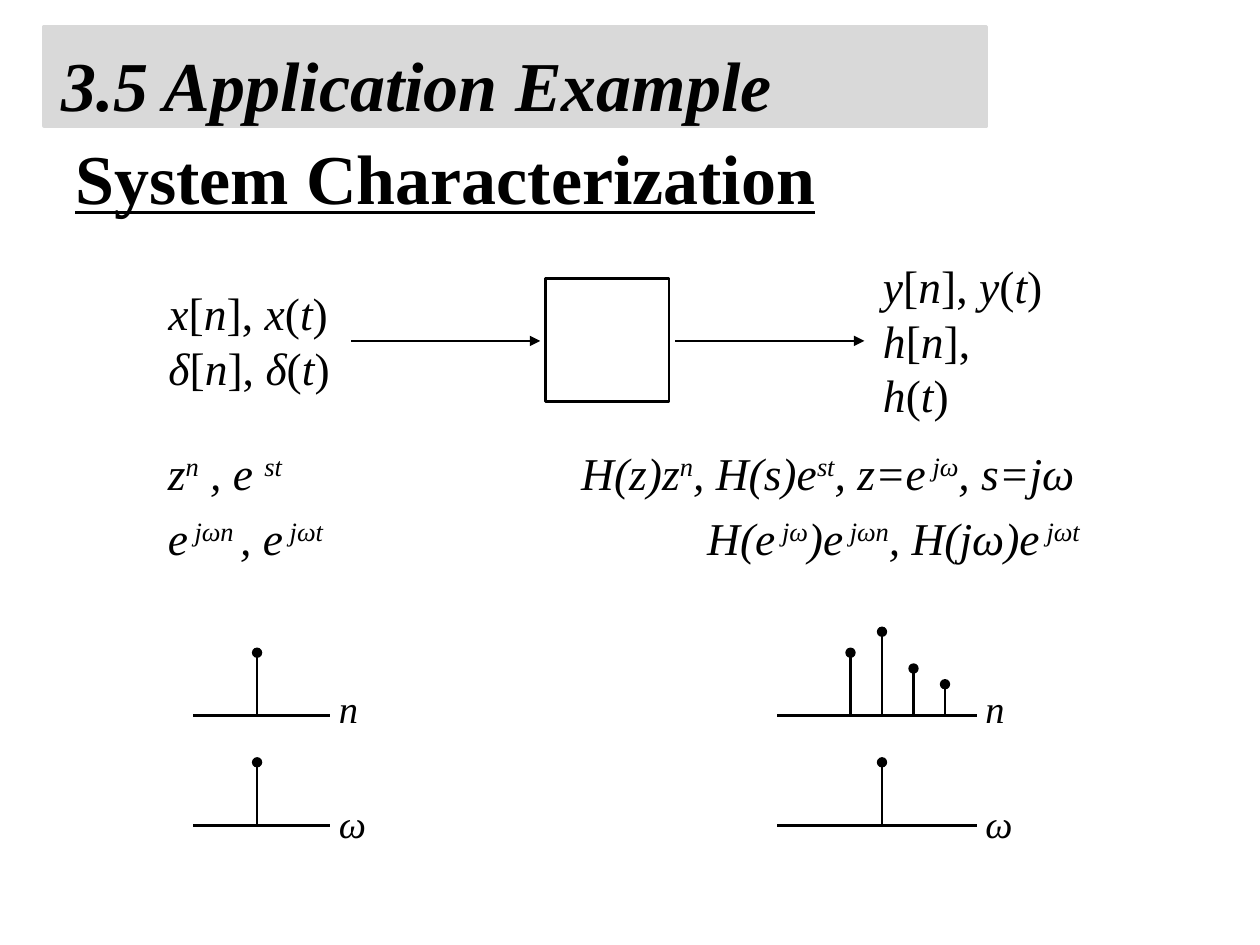
from dataclasses import dataclass

from lxml import etree
from pptx import Presentation
from pptx.dml.color import RGBColor
from pptx.enum.shapes import MSO_CONNECTOR, MSO_SHAPE
from pptx.enum.text import MSO_ANCHOR
from pptx.oxml.ns import qn
from pptx.util import Pt

STRAIGHT = MSO_CONNECTOR.STRAIGHT
RECTANGLE = MSO_SHAPE.RECTANGLE
TOP = MSO_ANCHOR.TOP
MIDDLE = MSO_ANCHOR.MIDDLE


@dataclass(frozen=True)
class Theme:
    font: str = "Times New Roman"
    ink: RGBColor = RGBColor(0, 0, 0)
    paper: RGBColor = RGBColor(255, 255, 255)
    band: RGBColor = RGBColor(0xD9, 0xD9, 0xD9)
    heading_size: float = 40
    formula_size: float = 26
    label_size: float = 22
    line_width: float = 1.5
    band_line_width: float = 2


THEME = Theme()


def add_rectangle(page, left, top, width, height, fill, line, line_width):
    box = page.shapes.add_shape(RECTANGLE, Pt(left), Pt(top), Pt(width), Pt(height))
    box.shadow.inherit = False
    box.fill.solid()
    box.fill.fore_color.rgb = fill
    box.line.color.rgb = line
    box.line.width = Pt(line_width)


def add_text_frame(page, left, top, width, height, anchor=TOP):
    box = page.shapes.add_textbox(Pt(left), Pt(top), Pt(width), Pt(height))
    frame = box.text_frame
    frame.word_wrap = True
    frame.vertical_anchor = anchor
    return frame


def add_span(para, text, size, italic=True, bold=False, underline=False, raised=False):
    span = para.add_run()
    span.text = text
    font = span.font
    font.name = THEME.font
    font.size = Pt(size)
    font.color.rgb = THEME.ink
    font.italic = italic
    font.bold = bold
    font.underline = underline
    if raised:
        span._r.get_or_add_rPr().set("baseline", "30000")


def add_heading(page, text, left, top, height, spacing, **style):
    frame = add_text_frame(page, left, top, 720 - left, height, MIDDLE)
    para = frame.paragraphs[0]
    para.line_spacing = spacing
    add_span(para, text, THEME.heading_size, bold=True, **style)


def add_signals(page, left, width, lines):
    frame = add_text_frame(page, left, 159, width, 70.5, MIDDLE)
    for row, line in enumerate(lines):
        para = frame.add_paragraph() if row else frame.paragraphs[0]
        for index, text in enumerate(line.split("|")):
            add_span(para, text, THEME.formula_size, italic=index % 2 == 0)


def add_tab_stop(para, position):
    tabs = etree.SubElement(para._p.get_or_add_pPr(), qn("a:tabLst"))
    etree.SubElement(tabs, qn("a:tab"), pos=str(Pt(position)), algn="l")


def add_formulas(page, rows):
    frame = add_text_frame(page, 88.8, 250.6, 631.2, 76.3)
    for row, (tab_position, formula) in enumerate(rows):
        para = frame.add_paragraph() if row else frame.paragraphs[0]
        para.space_before = Pt(6)
        add_tab_stop(para, tab_position)
        for index, text in enumerate(formula.split("|")):
            add_span(para, text, THEME.formula_size, raised=index % 2 == 1)


def add_line(page, start, end, end_tag=None, end_type=None):
    line = page.shapes.add_connector(STRAIGHT, *map(Pt, start + end))
    line.line.color.rgb = THEME.ink
    line.line.width = Pt(THEME.line_width)
    if end_tag:
        etree.SubElement(line.line._get_or_add_ln(), qn(end_tag), type=end_type)
    etree.SubElement(line._element.spPr, qn("a:effectLst"))


def add_stem_plot(page, left, right, axis, label, label_rise, stems):
    add_line(page, (left, axis), (right, axis))
    for center, height in stems:
        add_line(page, (center, axis - height), (center, axis), "a:headEnd", "oval")
    frame = add_text_frame(page, right - 2, axis - label_rise, 36, 42)
    add_span(frame.paragraphs[0], label, THEME.label_size)


def main():
    deck = Presentation()
    deck.slide_width, deck.slide_height = Pt(720), Pt(540)
    page = deck.slides.add_slide(deck.slide_layouts[6])

    add_rectangle(page, 25.2, 15.1, 538.6, 56.9, THEME.band, THEME.band, THEME.band_line_width)
    add_heading(page, "3.5 Application Example", 28, 0, 71.3, 1.5)
    add_heading(page, "System Characterization", 36, 73.4, 55.4, 1, italic=False, underline=True)

    add_signals(page, 89.2, 108, ["x|[|n|], |x|(|t|)", "δ|[|n|], |δ|(|t|)"])
    add_rectangle(page, 311.8, 159, 70.5, 70.5, THEME.paper, THEME.ink, THEME.line_width)
    add_signals(page, 497.5, 105.8, ["y|[|n|], |y|(|t|)", "h|[|n|], |h|(|t|)"])
    for left in (200.7, 385.9):
        add_line(page, (left, 194.8), (left + 108, 194.8), "a:tailEnd", "triangle")

    add_formulas(page, [
        (236.2, "z|n| , e |st|\tH(z)z|n|, H(s)e|st|, z=e| jω|, s=jω"),
        (308.2, "e| jωn |, e| jωt|\tH(e| jω|)e| jωn|, H(jω)e| jωt"),
    ])

    sample_stems = [(486, 36), (504, 48), (522, 27), (540, 18)]
    for axis, label, rise, output_stems in (
        (409, "n", 20.9, sample_stems),
        (471.6, "ω", 18, [(504, 36)]),
    ):
        add_stem_plot(page, 110.5, 188.6, axis, label, rise, [(146.9, 36)])
        add_stem_plot(page, 444.2, 558, axis, label, rise, output_stems)

    deck.save("out.pptx")


if __name__ == "__main__":
    main()
